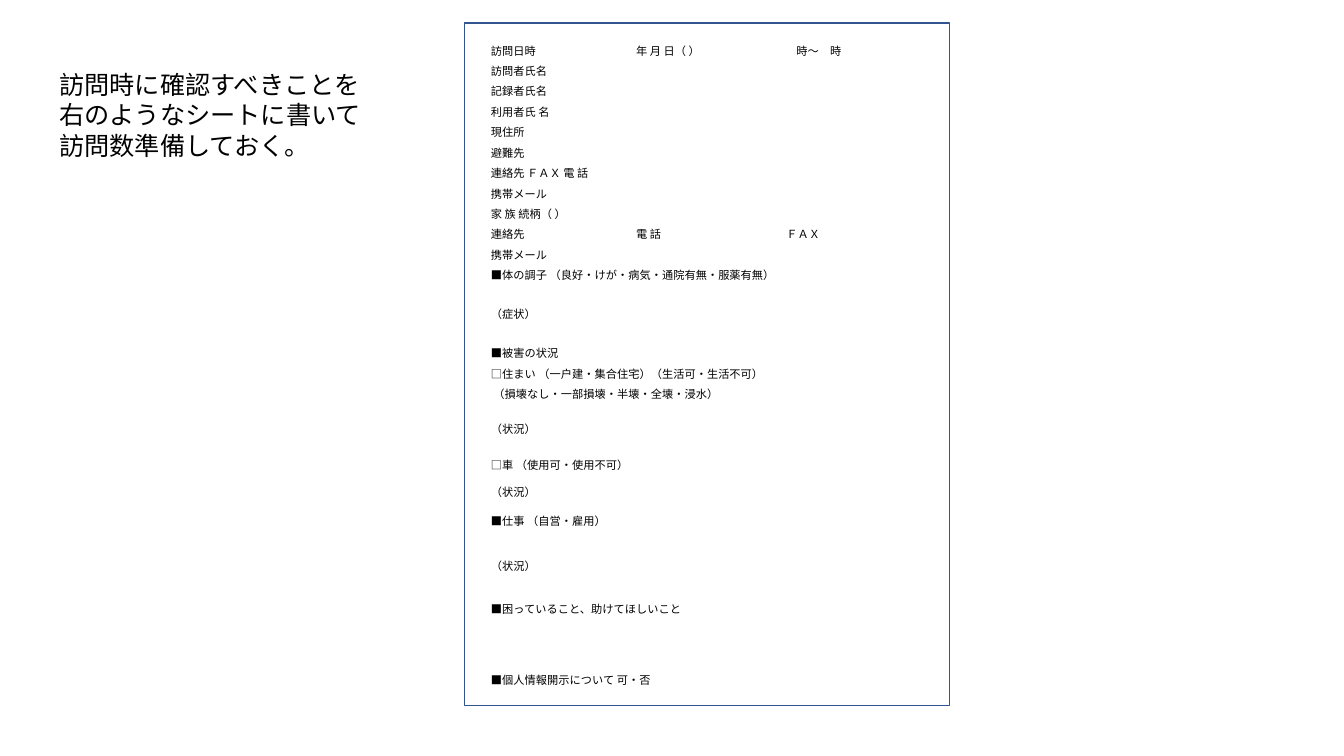
from lxml.etree import SubElement
from pptx import Presentation
from pptx.dml.color import RGBColor
from pptx.enum.shapes import MSO_SHAPE
from pptx.enum.text import MSO_ANCHOR
from pptx.oxml.ns import qn
from pptx.util import Inches, Pt

FONT = "Noto Sans CJK JP"
HUES = {"ink": "000000", "paper": "FFFFFF", "edge": "325491"}
PLAIN = "{2D5ABB26-0587-4C30-8999-92F81FD0307C}"
COLS = [1.44, 1.49, 1.45, 0.77, 0.77]
HIGH = 6.45
TALL = {12: 0.57, 16: 0.5, 18: 0.34, 19: 0.23, 20: 0.66, 21: 0.19, 22: 0.52, 23: 0.19}
ROWS = [
    ["訪問日時", "年 月 日（ ）", "時～　時"],
    ["訪問者氏名"],
    ["記録者氏名"],
    ["利用者氏 名"],
    ["現住所"],
    ["避難先"],
    ["連絡先 ＦＡＸ 電 話"],
    ["携帯メール"],
    ["家 族 続柄（ ）"],
    ["連絡先", "電 話", "ＦＡＸ"],
    ["携帯メール"],
    ["■体の調子 （良好・けが・病気・通院有無・服薬有無）"],
    ["（症状）"],
    ["■被害の状況"],
    ["□住まい （一戸建・集合住宅）（生活可・生活不可）"],
    [" （損壊なし・一部損壊・半壊・全壊・浸水）"],
    ["（状況）"],
    ["□車 （使用可・使用不可）"],
    ["（状況）"],
    ["■仕事 （自営・雇用）"],
    ["（状況）"],
    ["■困っていること、助けてほしいこと"],
    [],
    ["■個人情報開示について 可・否"],
]
SPANS = {(0, 2): 2, (6, 0): 2, (8, 0): 2, (11, 0): 5, (14, 0): 5,
         (15, 0): 4, (17, 0): 2, (19, 0): 2, (21, 0): 3, (23, 0): 3}


def write(frame, text, size=8, hue="ink"):
    """Put text in a frame, or size its empty line."""
    para = frame.paragraphs[0]
    if not text:
        SubElement(para._p, qn("a:endParaRPr")).set("sz", str(size * 100))
        return
    run = para.add_run()
    run.text = text
    run.font.name = FONT
    run.font.size = Pt(size)
    run.font.color.rgb = RGBColor.from_string(HUES[hue])
    SubElement(run._r.get_or_add_rPr(), qn("a:ea")).set("typeface", FONT)


class Sheet:
    """Hold the style and the current slide."""

    def __init__(self, deck):
        self.slide = deck.slides.add_slide(deck.slide_layouts[6])
        self.shapes = self.slide.shapes

    def box(self, *area):
        """Draw the outlined page."""
        box = self.shapes.add_shape(MSO_SHAPE.RECTANGLE, *map(Inches, area))
        box.shadow.inherit = False
        box.fill.solid()
        box.fill.fore_color.rgb = RGBColor.from_string(HUES["paper"])
        box.line.color.rgb = RGBColor.from_string(HUES["edge"])
        box.line.width = Pt(1)

    def note(self, text, *area, size=18):
        """Add a wrapped text box."""
        frame = self.shapes.add_textbox(*map(Inches, area)).text_frame
        frame.word_wrap = True
        write(frame, text, size=size)

    def form(self, left, top):
        """Add the visit form as a table."""
        area = map(Inches, (left, top, sum(COLS), HIGH))
        grid = self.shapes.add_table(len(ROWS), len(COLS), *area).table
        grid.first_row = grid.horz_banding = False
        grid._tbl.tblPr.find(qn("a:tableStyleId")).text = PLAIN
        for col, width in zip(grid.columns, COLS):
            col.width = Inches(width)
        line = (HIGH - sum(TALL.values())) / (len(ROWS) - len(TALL))
        for r, texts in enumerate(ROWS):
            grid.rows[r].height = Inches(TALL.get(r, line))
            for c in range(len(COLS)):
                self.cell(grid.cell(r, c), texts[c] if c < len(texts) else "")
        for (r, c), span in SPANS.items():
            grid.cell(r, c).merge(grid.cell(r, c + span - 1))
        grid.cell(0, 2).margin_left = Inches(0.11)

    def cell(self, cell, text):
        """Format and fill one cell."""
        cell.margin_left = cell.margin_right = cell.margin_top = Inches(0.01)
        cell.margin_bottom = 0
        cell.vertical_anchor = MSO_ANCHOR.MIDDLE
        cell.fill.background()
        write(cell.text_frame, text)


def main():
    """Build and save the slide."""
    deck = Presentation()
    deck.slide_width, deck.slide_height = Inches(13.33), Inches(7.5)
    sheet = Sheet(deck)
    sheet.box(4.61, 0.23, 4.81, 6.77)
    sheet.form(4.86, 0.39)
    sheet.note("訪問時に確認すべきことを右のようなシートに書いて訪問数準備しておく。",
               0.49, 0.64, 3.19, 1.01)
    deck.save("out.pptx")


if __name__ == "__main__":
    main()
